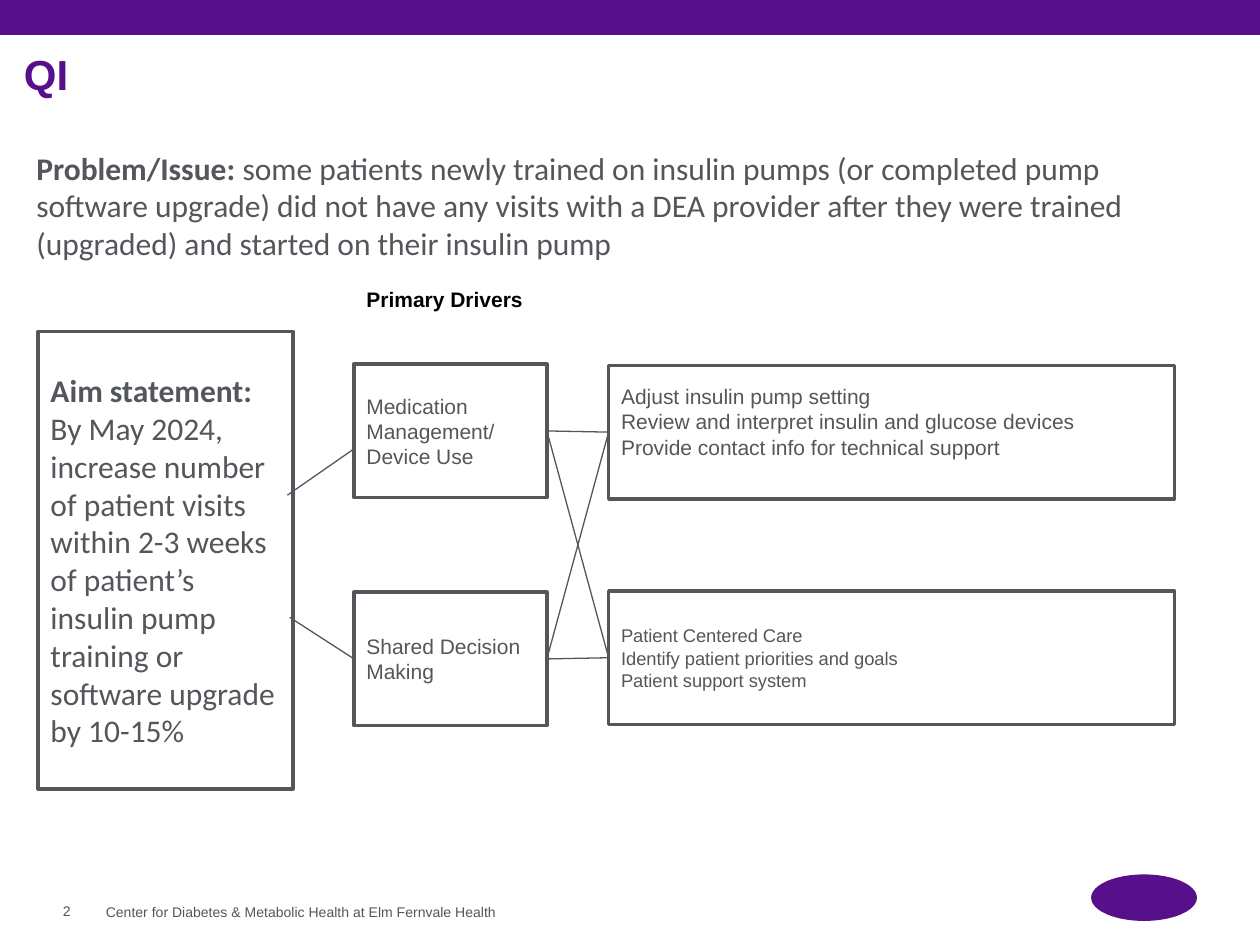
import pptx
import pptx.dml.color
import pptx.enum.shapes
import pptx.enum.text
import pptx.oxml.ns
import pptx.util
from dataclasses import dataclass
from lxml import etree

Pt = pptx.util.Pt
Shape = pptx.enum.shapes.MSO_SHAPE
Anchor = pptx.enum.text.MSO_ANCHOR
Align = pptx.enum.text.PP_ALIGN


@dataclass(frozen=True)
class Theme:
    brand: str = "580F8B"
    ink: str = "53565A"
    paper: str = "FFFFFF"
    black: str = "000000"
    sans: str = "Arial"
    body: str = "Calibri"
    title: float = 24
    lead: float = 18
    text: float = 12
    small: float = 10.5
    foot: float = 8
    edge: float = 2
    thin: float = 0.75


class Deck:
    """Holds the theme and the current slide."""

    def __init__(self, theme, wide, high):
        self.theme = theme
        self.show = pptx.Presentation()
        self.show.slide_width, self.show.slide_height = Pt(wide), Pt(high)
        self.slide = self.show.slides.add_slide(self.show.slide_layouts[6])

    def tint(self, code):
        return pptx.dml.color.RGBColor.from_string(code)

    def letter(self, shape, lines, size, font=None, color=None, bold=False,
               anchor=Anchor.MIDDLE, inset=(7.2, 3.6, 7.2, 3.6), space=None):
        """Fill a shape with lines, each a list of runs; bold marks the first run."""
        frame = shape.text_frame
        frame.word_wrap = True
        frame.vertical_anchor = anchor
        (frame.margin_left, frame.margin_top,
         frame.margin_right, frame.margin_bottom) = map(Pt, inset)
        for i, parts in enumerate(lines):
            para = frame.paragraphs[0] if i == 0 else frame.add_paragraph()
            para.text = parts[0]
            for part in parts[1:]:
                para.add_run().text = part
            para.alignment = Align.LEFT
            if space:
                para.line_spacing = space
            for j, run in enumerate(para.runs):
                run.font.size = Pt(size)
                run.font.name = font or self.theme.sans
                run.font.bold = bold and i == j == 0
                run.font.color.rgb = self.tint(color or self.theme.ink)

    def block(self, area, fill, edge=None, kind=Shape.RECTANGLE):
        shape = self.slide.shapes.add_shape(kind, *map(Pt, area))
        shape.shadow.inherit = False
        shape.fill.solid()
        shape.fill.fore_color.rgb = self.tint(fill)
        if edge:
            shape.line.color.rgb = self.tint(edge)
            shape.line.width = Pt(self.theme.edge)
        else:
            shape.line.fill.background()
        return shape

    def card(self, area, lines, size, **style):
        shape = self.block(area, self.theme.paper, self.theme.ink)
        self.letter(shape, lines, size, **style)

    def label(self, area, lines, size, **style):
        shape = self.slide.shapes.add_textbox(*map(Pt, area))
        self.letter(shape, lines, size, **style)

    def join(self, start, end):
        kind = pptx.enum.shapes.MSO_CONNECTOR.STRAIGHT
        line = self.slide.shapes.add_connector(kind, *map(Pt, start + end))
        line.line.color.rgb = self.tint(self.theme.ink)
        line.line.width = Pt(self.theme.thin)
        props = line._element.spPr
        etree.SubElement(props, pptx.oxml.ns.qn("a:effectLst"))


def main():
    look = Theme()
    deck = Deck(look, 720, 540)
    flush = (0, 0, 0, 0)

    # Frame of the page
    deck.block((0, 0, 720, 20), look.brand)
    deck.block((623.5, 499.7, 60.5, 26.6), look.brand, kind=Shape.OVAL)
    deck.label((60.5, 516, 266, 9.7),
               [["Center for Diabetes & Metabolic Health at Elm Fernvale Health"]],
               look.foot, inset=flush)
    deck.label((36, 515.5, 20, 9.7), [["2"]], look.foot, inset=flush)
    deck.label((13.7, 32.4, 648, 24.5), [["QI"]], look.title, color=look.brand,
               bold=True, anchor=Anchor.BOTTOM, inset=flush, space=0.85)
    deck.label((13.7, 81.4, 687, 72.7),
               [["Problem/Issue: ",
                 "some patients newly trained on insulin pumps (or completed pump "
                 "software upgrade) did not have any visits with a DEA provider after "
                 "they were trained (upgraded) and started on their insulin pump"]],
               look.lead, font=look.body, bold=True, anchor=Anchor.TOP)

    # Aim, drivers and actions
    deck.card((21.8, 189.4, 145.6, 261.4),
              [["Aim statement:"],
               ["By May 2024, increase number of patient visits within 2-3 weeks of "
                "patient’s insulin pump training or software upgrade by 10-15%"]],
              look.lead, font=look.body, bold=True)

    left, wide, high = 202.3, 110.2, 76.3
    right = 347.8
    drivers = [(208.1, "Medication Management/ Device Use"),
               (338.4, "Shared Decision Making")]
    for top, text in drivers:
        deck.card((left, top, wide, high), [[text]], look.text)

    actions = [
        (208.8, look.text, 15.6,
         ["Adjust insulin pump setting",
          "Review and interpret insulin and glucose devices",
          "Provide contact info for technical support"]),
        (337.7, look.small, 3.6,
         ["Patient Centered Care",
          "Identify patient priorities and goals",
          "Patient support system"]),
    ]
    for top, size, foot, lines in actions:
        deck.card((right, top, 323.3, high), [[line] for line in lines], size,
                  inset=(7.2, 3.6, 7.2, foot))

    # Each driver leads to each action
    for top, _ in drivers:
        for goal, *_ in actions:
            deck.join((left + wide, top + high / 2), (right, goal + high / 2))
    deck.join((164.2, 283), (left, 256.5))
    deck.join((165.6, 352.8), (left, 376.5))

    head = deck.block((left, 148.3, 109.4, 45.4), look.paper)
    deck.letter(head, [["Primary Drivers"]], look.text, color=look.black, bold=True)

    deck.show.save("out.pptx")


if __name__ == "__main__":
    main()
